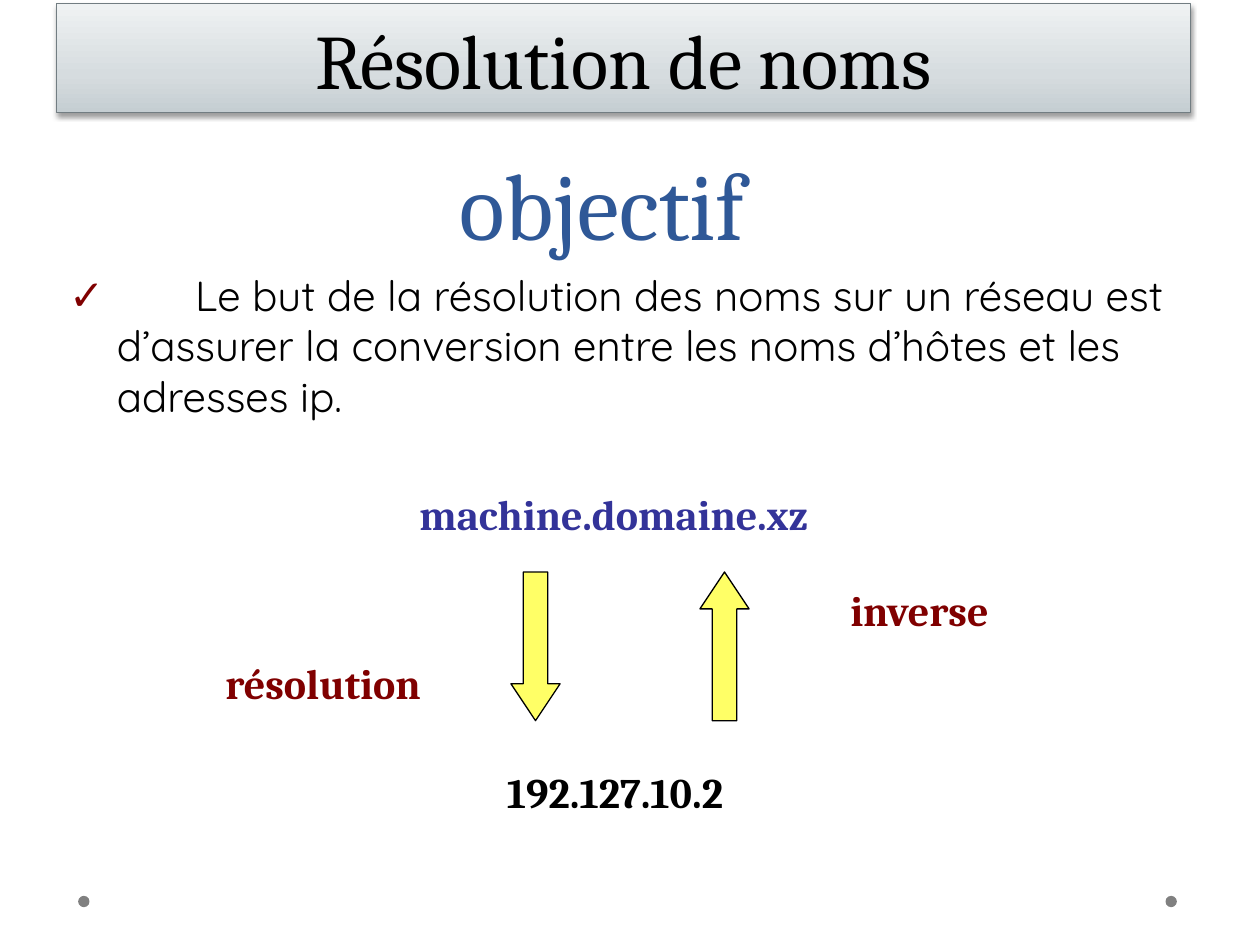
from lxml import etree
from pptx import Presentation
from pptx.dml.color import RGBColor
from pptx.enum.shapes import MSO_SHAPE
from pptx.enum.text import MSO_ANCHOR, MSO_AUTO_SIZE, PP_ALIGN
from pptx.oxml import parse_xml
from pptx.oxml.ns import nsdecls, qn
from pptx.util import Inches, Pt

RECTANGLE, DOT = MSO_SHAPE.RECTANGLE, MSO_SHAPE.OVAL
DOWN, UP = MSO_SHAPE.DOWN_ARROW, MSO_SHAPE.UP_ARROW
TOP, MIDDLE, BOTTOM = MSO_ANCHOR.TOP, MSO_ANCHOR.MIDDLE, MSO_ANCHOR.BOTTOM
LEFT, CENTER = PP_ALIGN.LEFT, PP_ALIGN.CENTER
NO_FIT = MSO_AUTO_SIZE.NONE

THEME = {
    "serif": "Cambria", "sans": "Quicksand",
    "banner_size": Pt(44), "title_size": Pt(54), "text_size": Pt(24),
    "black": "000000", "title": "2F5897", "host": "333399", "label": "800000",
    "arrow": "FFFF66", "dot": "808080", "banner_line": "727D82",
    "banner_stops": [(0, "C5CED2"), (35, "D6DCDF"), (100, "EFF2F3")],
}

prs = Presentation()
prs.slide_width, prs.slide_height = Inches(10), Inches(7.5)
slide = prs.slides.add_slide(prs.slide_layouts[5])


def area(left, top, width, height):
    """Turn percentages of the slide's width and height into lengths."""
    across, down = prs.slide_width / 100, prs.slide_height / 100
    return [round(v) for v in (left * across, top * down, width * across, height * down)]


def write(shape, text, size, color, font="serif", bold=False, align=LEFT,
          anchor=TOP, wrap=True):
    frame = shape.text_frame
    frame.text = text
    paragraph = frame.paragraphs[0]
    paragraph.alignment = align
    frame_format = {"word_wrap": wrap, "auto_size": NO_FIT, "vertical_anchor": anchor}
    for name, value in frame_format.items():
        setattr(frame, name, value)
    font_format = {"name": THEME[font], "size": THEME[size], "bold": bold}
    for name, value in font_format.items():
        setattr(paragraph.runs[0].font, name, value)
    paragraph.runs[0].font.color.rgb = RGBColor.from_string(THEME[color])
    return paragraph


# Footer dots
for left in (92.5, 6.2):
    dot = slide.shapes.add_shape(DOT, *area(left, 94.8, 0.9, 1.2))
    dot.shadow.inherit = False
    dot.fill.solid()
    dot.fill.fore_color.rgb = RGBColor.from_string(THEME["dot"])
    dot.line.fill.background()

# Title
title = slide.shapes.title
title.left, title.top, title.width, title.height = area(2.8, 11.47, 90, 16.67)
heading = write(title, "objectif", "title_size", "title", align=CENTER, anchor=BOTTOM)
heading.line_spacing = Pt(58)

# Goal, with a check mark, a hanging indent and a tab stop for its first word
goal_box = slide.shapes.add_textbox(*area(4.5, 27.87, 90, 26.67))
goal = write(
    goal_box,
    " \tLe but de la résolution des noms sur un réseau est d’assurer "
    "la conversion entre les noms d’hôtes et les adresses ip.",
    "text_size", "black", font="sans")
goal.space_before = Pt(4.8)
goal_format = goal._p.get_or_add_pPr()
goal_format.set("marL", str(Inches(0.38)))
goal_format.set("indent", str(-Inches(0.38)))
bullet_color = etree.SubElement(goal_format, qn("a:buClr"))
etree.SubElement(bullet_color, qn("a:srgbClr"), val=THEME["label"])
etree.SubElement(goal_format, qn("a:buFont"), typeface=THEME["sans"])
etree.SubElement(goal_format, qn("a:buChar"), char="✓")
tab_stops = etree.SubElement(goal_format, qn("a:tabLst"))
etree.SubElement(tab_stops, qn("a:tab"), pos=str(Inches(1)), algn="l")

# Names and addresses around the arrows
for text, left, top, width, color, wrap in (
    ("machine.domaine.xz", 32.3, 51.07, 35.4, "host", True),
    ("192.127.10.2", 39.25, 80.45, 21.5, "black", False),
    ("résolution", 16.9, 68.93, 18.1, "label", False),
    ("inverse", 66.5, 61.2, 13.7, "label", False),
):
    label = slide.shapes.add_textbox(*area(left, top, width, 6.67))
    write(label, text, "text_size", color, bold=True, wrap=wrap)

# Both directions of the conversion
for direction, left in ((DOWN, 40.55), (UP, 55.55)):
    arrow = slide.shapes.add_shape(direction, *area(left, 60.53, 3.9, 15.73))
    arrow.adjustments[0], arrow.adjustments[1] = 0.5, 0.75
    arrow.shadow.inherit = False
    arrow.fill.solid()
    arrow.fill.fore_color.rgb = RGBColor.from_string(THEME["arrow"])
    arrow.line.color.rgb = RGBColor.from_string(THEME["black"])
    arrow.line.width = Pt(0.75)

# Banner with a gradient and a soft shadow
banner = slide.shapes.add_shape(RECTANGLE, *area(4.5, 0.4, 90, 11.55))
banner.line.color.rgb = RGBColor.from_string(THEME["banner_line"])
banner.line.width = Pt(0.75)
stops = "".join(
    f'<a:gs pos="{position * 1000}"><a:srgbClr val="{color}"/></a:gs>'
    for position, color in THEME["banner_stops"])
banner_format = banner._element.spPr
banner_format.find(qn("a:ln")).addprevious(parse_xml(
    f'<a:gradFill {nsdecls("a")} rotWithShape="1"><a:gsLst>{stops}</a:gsLst>'
    '<a:lin ang="16200000" scaled="0"/></a:gradFill>'))
banner_format.append(parse_xml(
    f'<a:effectLst {nsdecls("a")}><a:outerShdw blurRad="{Pt(3.1)}" dist="{Pt(1.6)}" '
    f'dir="5400000" rotWithShape="0"><a:srgbClr val="{THEME["black"]}">'
    '<a:alpha val="38000"/></a:srgbClr></a:outerShdw></a:effectLst>'))
write(banner, "Résolution de noms", "banner_size", "black", align=CENTER, anchor=MIDDLE)

prs.save("out.pptx")
